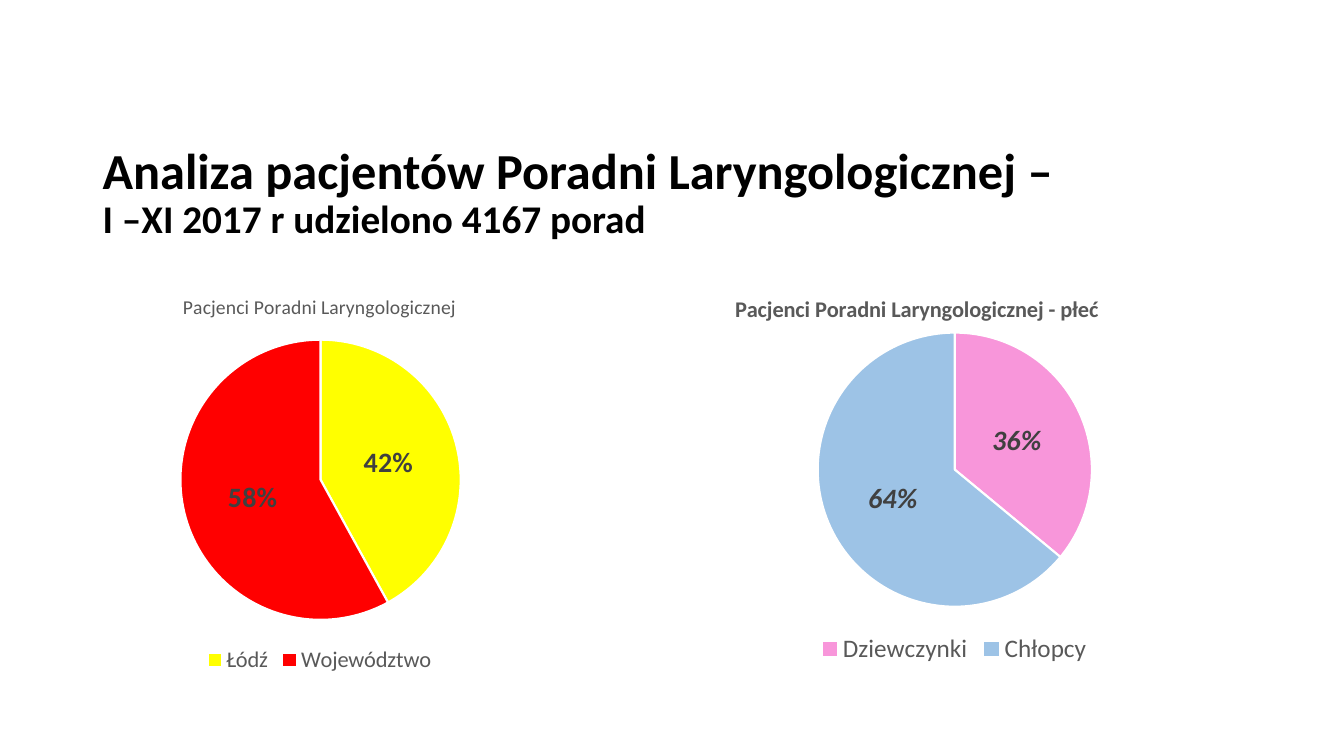
from lxml.etree import SubElement
from pptx import Presentation
from pptx.chart.data import CategoryChartData
from pptx.dml.color import RGBColor
from pptx.enum.chart import XL_CHART_TYPE, XL_LABEL_POSITION, XL_LEGEND_POSITION
from pptx.enum.text import MSO_ANCHOR
from pptx.oxml.ns import qn
from pptx.util import Inches, Pt

FONT = "Calibri"
GREY, DARK = "595959", "404040"

HEADING = [
    ("Analiza pacjentów Poradni Laryngologicznej –", 36),
    ("I –XI 2017 r udzielono 4167 porad", 28),
]

# box and pie are left, top, width, height on the slide, in inches
CHARTS = [
    dict(
        title="Pacjenci Poradni Laryngologicznej - płeć",
        title_font=dict(size=16, bold=True), title_at=(7.25, 2.87),
        box=(6.59, 2.65, 5.75, 3.99), pie=(8.11, 3.3, 2.72, 2.72),
        slices=[("Dziewczynki", 36, "F896DA"), ("Chłopcy", 64, "9DC3E6")],
        legend_size=18, italic=True,
    ),
    dict(
        title="Pacjenci Poradni Laryngologicznej",
        title_font=dict(size=14, bold=False), title_at=None,
        box=(0, 2.74, 6.34, 3.99), pie=(1.79, 3.37, 2.78, 2.78),
        slices=[("Łódź", 42, "FFFF00"), ("Województwo", 58, "FF0000")],
        legend_size=16, italic=False,
    ),
]


def rgb(color):
    return RGBColor.from_string(color)


def set_font(font, size, color, bold=False, italic=False):
    font.name, font.size = FONT, Pt(size)
    font.bold, font.italic = bold, italic
    font.color.rgb = rgb(color)


def add_run(p, text, **fmt):
    r = p.add_run()
    r.text = text
    set_font(r.font, **fmt)


def set_layout(parent, index, box, place):
    """Fix a chart part at a slide position, as fractions of the chart box."""
    for old in parent.findall(qn("c:layout")):
        parent.remove(old)
    layout = parent.makeelement(qn("c:layout"))
    parent.insert(index, layout)
    manual = SubElement(layout, qn("c:manualLayout"))
    values = {"xMode": "edge", "yMode": "edge",
              "x": (place[0] - box[0]) / box[2],
              "y": (place[1] - box[1]) / box[3]}
    if len(place) == 4:
        SubElement(manual, qn("c:layoutTarget")).set("val", "inner")
        values.update(w=place[2] / box[2], h=place[3] / box[3])
    for tag, value in values.items():
        SubElement(manual, qn(f"c:{tag}")).set("val", str(value))


def add_pie(slide, item):
    names, values, colors = zip(*item["slices"])
    data = CategoryChartData()
    data.categories = names
    data.add_series("Series 1", values)
    box = item["box"]
    chart = slide.shapes.add_chart(
        XL_CHART_TYPE.PIE, *map(Inches, box), data).chart
    set_font(chart.font, 10, "000000")

    chart.has_title = True
    title = chart.chart_title
    add_run(title.text_frame.paragraphs[0], item["title"],
            color=GREY, **item["title_font"])
    title.include_in_layout = False
    if item["title_at"]:
        set_layout(title._element, 1, box, item["title_at"])

    chart.has_legend = True
    chart.legend.position = XL_LEGEND_POSITION.BOTTOM
    chart.legend.include_in_layout = False
    set_font(chart.legend.font, item["legend_size"], GREY)

    plot = chart.plots[0]
    plot.vary_by_categories = True
    set_layout(plot._element.getparent(), 0, box, item["pie"])
    for i, color in enumerate(colors):
        fmt = plot.series[0].points[i].format
        fmt.fill.solid()
        fmt.fill.fore_color.rgb = rgb(color)
        fmt.line.color.rgb = rgb("FFFFFF")
        fmt.line.width = Pt(1.5)

    labels = plot.series[0].data_labels
    labels.show_percentage = True
    labels.show_value = False
    labels.number_format = "0%"
    labels.number_format_is_linked = False
    labels.position = XL_LABEL_POSITION.CENTER
    set_font(labels.font, 20, DARK, bold=True, italic=item["italic"])


def add_heading(slide):
    sp = slide.shapes.add_textbox(
        Inches(0.92), Inches(1.2), Inches(11.5), Inches(1.45))
    tf = sp.text_frame
    tf.word_wrap = True
    tf.vertical_anchor = MSO_ANCHOR.MIDDLE
    p = tf.paragraphs[0]
    p.line_spacing = 0.9
    for i, (text, size) in enumerate(HEADING):
        if i:
            p.add_line_break()
        add_run(p, text, size=size, color="000000", bold=True)


def main():
    prs = Presentation()
    prs.slide_width, prs.slide_height = Inches(13.33), Inches(7.5)
    slide = prs.slides.add_slide(prs.slide_layouts[6])
    add_heading(slide)
    for item in CHARTS:
        add_pie(slide, item)
    prs.save("out.pptx")


if __name__ == "__main__":
    main()
